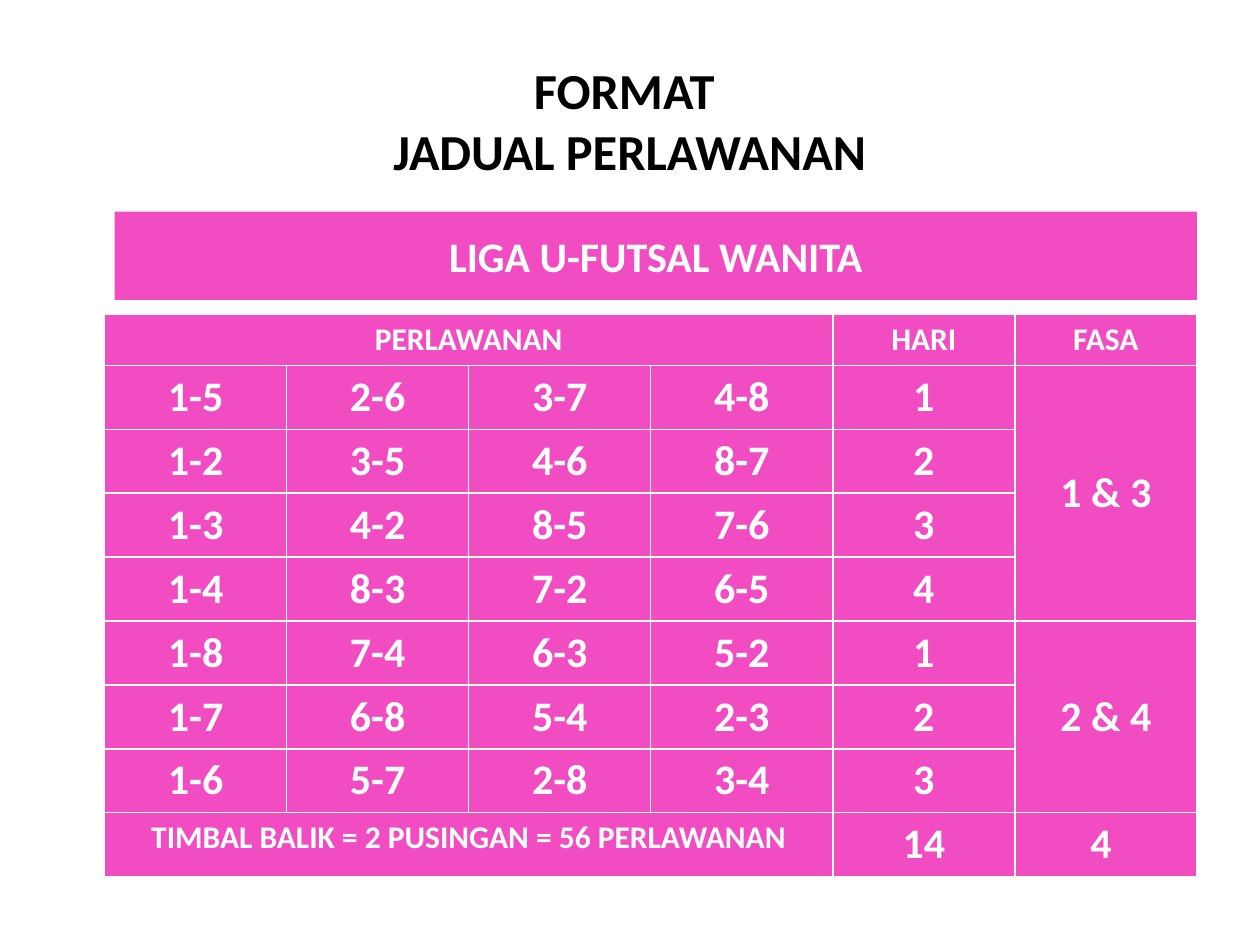
from pptx import Presentation
from pptx.dml.color import RGBColor
from pptx.enum.shapes import MSO_SHAPE
from pptx.enum.text import MSO_ANCHOR, PP_ALIGN
from pptx.util import Inches, Pt

RECTANGLE = MSO_SHAPE.RECTANGLE
MIDDLE, TOP = MSO_ANCHOR.MIDDLE, MSO_ANCHOR.TOP
CENTER = PP_ALIGN.CENTER
PINK, WHITE, BLACK = "F24CC3", "FFFFFF", "000000"
ROW_HEIGHT = 0.41

SCHEDULE = [
    ["PERLAWANAN", "", "", "", "HARI", "FASA"],
    ["1-5", "2-6", "3-7", "4-8", "1", "1 & 3"],
    ["1-2", "3-5", "4-6", "8-7", "2", ""],
    ["1-3", "4-2", "8-5", "7-6", "3", ""],
    ["1-4", "8-3", "7-2", "6-5", "4", ""],
    ["1-8", "7-4", "6-3", "5-2", "1", "2 & 4"],
    ["1-7", "6-8", "5-4", "2-3", "2", ""],
    ["1-6", "5-7", "2-8", "3-4", "3", ""],
    ["TIMBAL BALIK = 2 PUSINGAN = 56 PERLAWANAN", "", "", "", "14", "4 "],
]
# First and last cell of each merged block, as (row, column)
MERGES = [((0, 0), (0, 3)), ((1, 5), (4, 5)), ((5, 5), (7, 5)), ((8, 0), (8, 3))]


def paint(target, color):
    target.fill.solid()
    target.fill.fore_color.rgb = RGBColor.from_string(color)


def write(frame, text, size, color):
    """Fill a text frame with centred bold text."""
    frame.text = text
    for para in frame.paragraphs:
        para.alignment = CENTER
        for span in para.runs:
            span.font.name = "Calibri"
            span.font.size = Pt(size)
            span.font.bold = True
            span.font.color.rgb = RGBColor.from_string(color)


def place_title(page, box):
    title = page.shapes.title
    title.left, title.top, title.width, title.height = map(Inches, box)
    title.text_frame.vertical_anchor = MIDDLE
    write(title.text_frame, "FORMAT \vJADUAL PERLAWANAN", 28.8, BLACK)


def add_banner(page, box):
    banner = page.shapes.add_shape(RECTANGLE, *map(Inches, box))
    banner.shadow.inherit = False
    banner.line.fill.background()
    paint(banner, PINK)
    frame = banner.text_frame
    frame.word_wrap = True
    frame.vertical_anchor = MIDDLE
    write(frame, "LIGA U-FUTSAL WANITA", 24, WHITE)
    frame.paragraphs[0].space_before = Pt(4.8)


def add_schedule(page, left, top, width):
    """Add the match table; its table style draws the white rules."""
    row_count, column_count = len(SCHEDULE), len(SCHEDULE[0])
    table = page.shapes.add_table(
        row_count, column_count, Inches(left), Inches(top),
        Inches(width), Inches(ROW_HEIGHT * row_count)).table
    table.horz_banding = False
    for first, last in MERGES:
        table.cell(*first).merge(table.cell(*last))
    for row, texts in enumerate(SCHEDULE):
        for column, text in enumerate(texts):
            cell = table.cell(row, column)
            paint(cell, PINK)
            if cell.is_spanned:
                continue
            is_heading = row == 0 or (row == row_count - 1 and column == 0)
            write(cell.text_frame, text, 18 if is_heading else 24, WHITE)
            cell.vertical_anchor = MIDDLE if column == column_count - 1 else TOP


def main():
    deck = Presentation()
    deck.slide_width, deck.slide_height = Inches(10), Inches(7.5)
    page = deck.slides.add_slide(deck.slide_layouts[5])
    place_title(page, (0.5, 0.44, 9, 1.02))
    add_banner(page, (0.91, 1.68, 8.59, 0.7))
    add_schedule(page, 0.83, 2.49, 8.67)
    deck.save("out.pptx")


if __name__ == "__main__":
    main()
